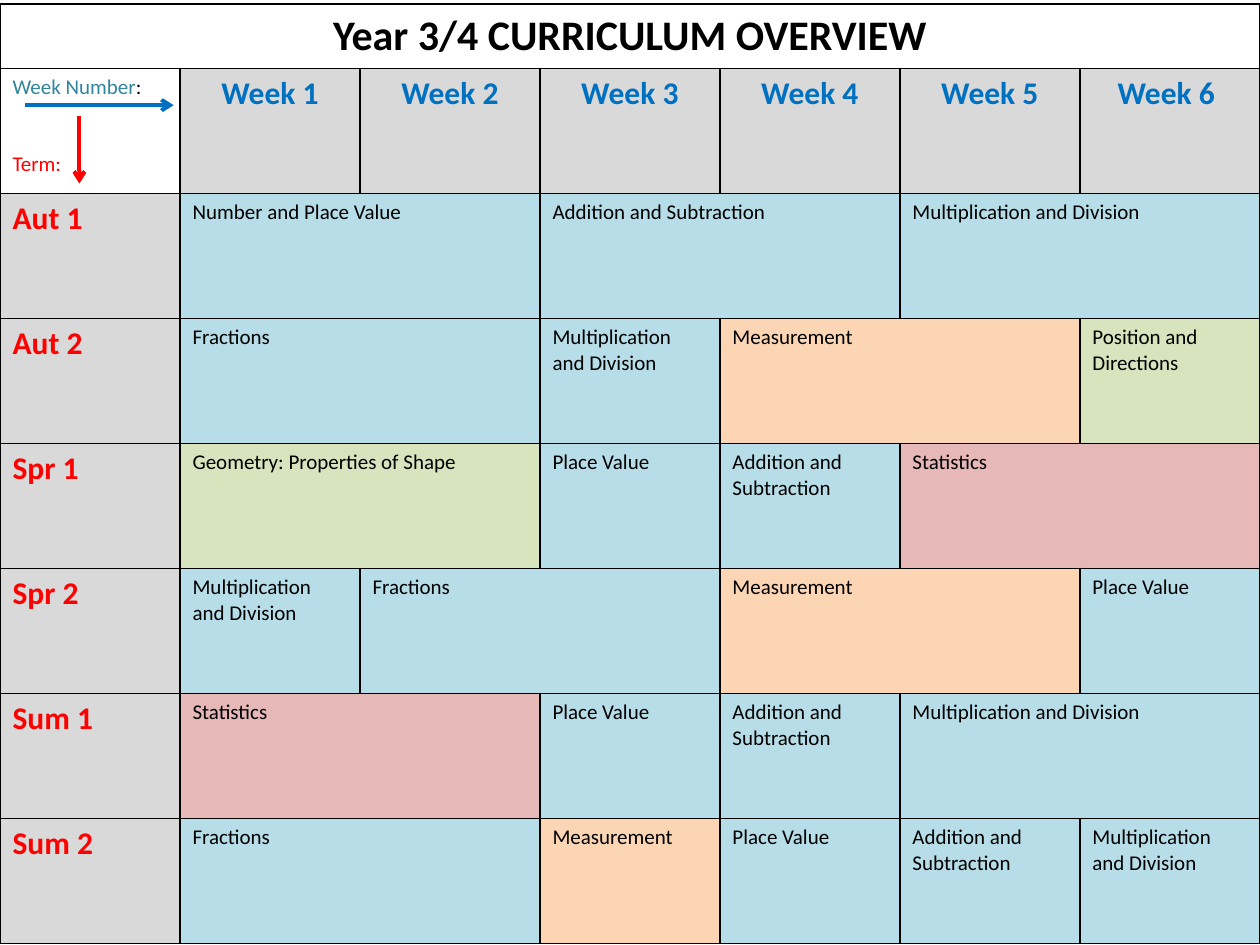
from pptx import Presentation
from pptx.dml.color import RGBColor
from pptx.enum.shapes import MSO_CONNECTOR as CONN
from pptx.enum.text import PP_ALIGN as ALIGN
from pptx.oxml import parse_xml
from pptx.oxml.ns import nsdecls
from pptx.util import Cm, Pt
from lxml.etree import SubElement

BLACK = RGBColor(0x00, 0x00, 0x00)
WHITE = RGBColor(0xFF, 0xFF, 0xFF)
GREY = RGBColor(0xD9, 0xD9, 0xD9)
RED = RGBColor(0xFF, 0x00, 0x00)
BLUE = RGBColor(0x00, 0x70, 0xC0)
TEAL = RGBColor(0x31, 0x85, 0x9C)
NUMBER = RGBColor(0xB7, 0xDE, 0xE8)
MEASURE = RGBColor(0xFC, 0xD5, 0xB5)
SHAPE = RGBColor(0xD7, 0xE4, 0xBD)
DATA = RGBColor(0xE6, 0xB9, 0xB8)

TOPIC_FILLS = {
    "Measurement": MEASURE,
    "Position and Directions": SHAPE,
    "Geometry: Properties of Shape": SHAPE,
    "Statistics": DATA,
}
WEEKS = ["Week 1", "Week 2", "Week 3", "Week 4", "Week 5", "Week 6 "]
TERMS = [
    ("Aut 1", [("Number and Place Value", 2), ("Addition and Subtraction", 2),
               ("Multiplication and Division", 2)]),
    ("Aut 2", [("Fractions", 2), ("Multiplication and Division", 1),
               ("Measurement", 2), ("Position and Directions", 1)]),
    ("Spr 1", [("Geometry: Properties of Shape", 2), ("Place Value", 1),
               ("Addition and Subtraction", 1), ("Statistics", 2)]),
    ("Spr 2", [("Multiplication and Division", 1), ("Fractions", 2),
               ("Measurement", 2), ("Place Value", 1)]),
    ("Sum 1", [("Statistics", 2), ("Place Value", 1),
               ("Addition and Subtraction", 1), ("Multiplication and Division", 2)]),
    ("Sum 2", [("Fractions", 2), ("Measurement", 1), ("Place Value", 1),
               ("Addition and Subtraction", 1), ("Multiplication and Division", 1)]),
]


def style_run(r, size, color, bold=False):
    r.font.name = "Calibri"
    r.font.size = Pt(size)
    r.font.bold = bold
    r.font.color.rgb = color


def fill_cell(cell, text, size, color, fill, bold=False, align=ALIGN.LEFT):
    cell.fill.solid()
    cell.fill.fore_color.rgb = fill
    p = cell.text_frame.paragraphs[0]
    p.text = text
    p.alignment = align
    style_run(p.runs[0], size, color, bold)


prs = Presentation()
prs.slide_width, prs.slide_height = Cm(25.4), Cm(19.05)
s = prs.slides.add_slide(prs.slide_layouts[6])

table = s.shapes.add_table(8, 7, 0, Cm(0.08), Cm(25.4), Cm(18.97)).table
table.first_row = False
table.horz_banding = False
for col in table.columns:
    col.width = Cm(25.4) // 7
for row in table.rows:
    row.height = Cm(2.52)
table.rows[0].height = Cm(1.3)

table.cell(0, 0).merge(table.cell(0, 6))
fill_cell(table.cell(0, 0), "Year 3/4 CURRICULUM OVERVIEW", 24, BLACK, WHITE, True, ALIGN.CENTER)

corner = table.cell(1, 0)
fill_cell(corner, "Week Number", 12, TEAL, WHITE)
tf = corner.text_frame
r = tf.paragraphs[0].add_run()
r.text = ":"
style_run(r, 12, BLACK)
p = tf.add_paragraph()
p.text = "Term:"
p.space_before = Pt(29)
style_run(p.runs[0], 12, RED)

for i, week in enumerate(WEEKS, 1):
    fill_cell(table.cell(1, i), week, 18, BLUE, GREY, True, ALIGN.CENTER)

for i, (term, topics) in enumerate(TERMS, 2):
    fill_cell(table.cell(i, 0), term, 18, RED, GREY, True)
    j = 1
    for topic, weeks in topics:
        if weeks > 1:
            table.cell(i, j).merge(table.cell(i, j + weeks - 1))
        fill_cell(table.cell(i, j), topic, 12, BLACK, TOPIC_FILLS.get(topic, NUMBER))
        j += weeks

for cell in table.iter_cells():
    tcPr = cell._tc.get_or_add_tcPr()
    for k, side in enumerate(("lnL", "lnR", "lnT", "lnB")):
        tcPr.insert(k, parse_xml(
            f'<a:{side} {nsdecls("a")} w="{Pt(1)}"><a:solidFill>'
            f'<a:srgbClr val="{BLACK}"/></a:solidFill></a:{side}>'))

for x1, y1, x2, y2, color in [(0.5, 2.12, 3.5, 2.12, BLUE), (1.6, 2.33, 1.6, 3.7, RED)]:
    arrow = s.shapes.add_connector(CONN.STRAIGHT, Cm(x1), Cm(y1), Cm(x2), Cm(y2))
    arrow.line.color.rgb = color
    arrow.line.width = Pt(2.25)
    ns = "{" + arrow.line._ln.nsmap["a"] + "}"
    SubElement(arrow.line._ln, ns + "tailEnd", type="arrow")
    SubElement(arrow._element.spPr, ns + "effectLst")

prs.save("out.pptx")
